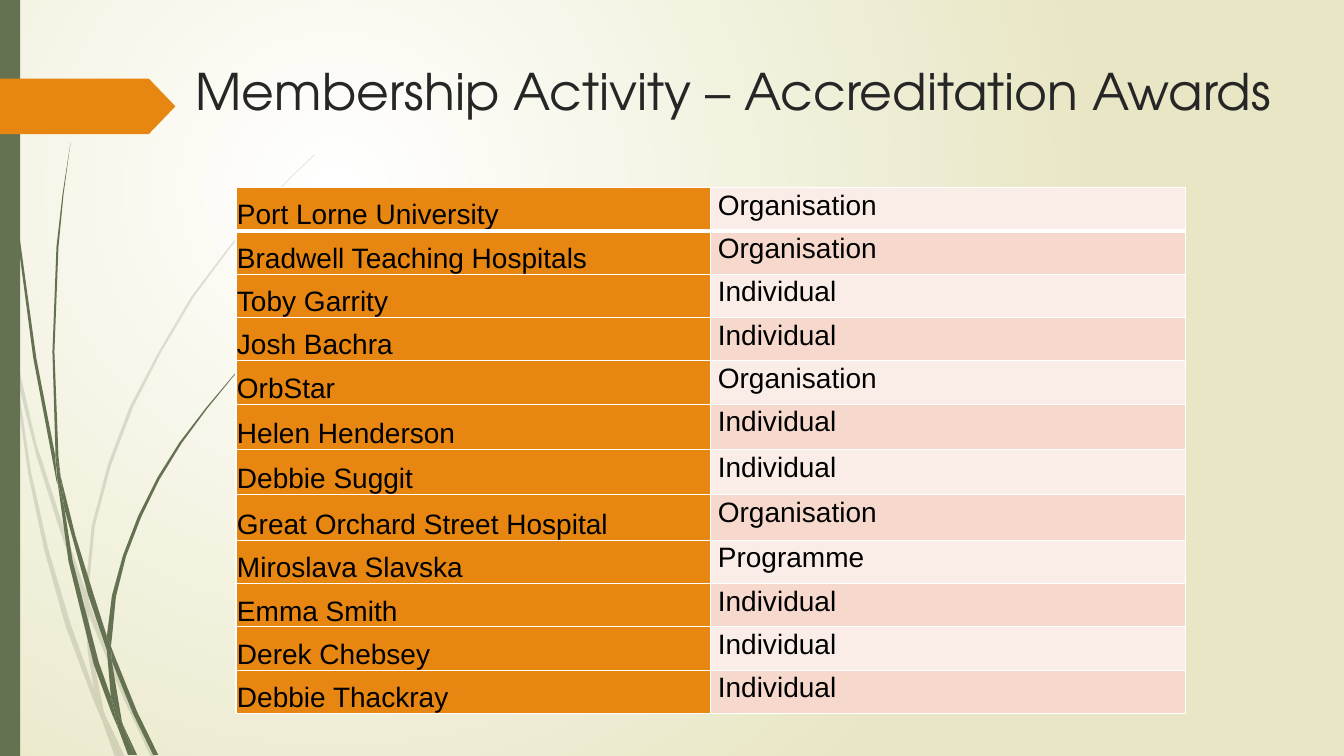
from dataclasses import dataclass

from lxml import etree
from pptx import Presentation
from pptx.dml.color import RGBColor
from pptx.enum.shapes import MSO_SHAPE
from pptx.enum.text import MSO_ANCHOR, MSO_AUTO_SIZE, PP_ALIGN
from pptx.oxml.ns import qn
from pptx.util import Inches, Pt

RECTANGLE, PENTAGON = MSO_SHAPE.RECTANGLE, MSO_SHAPE.PENTAGON
TOP, BOTTOM = MSO_ANCHOR.TOP, MSO_ANCHOR.BOTTOM
LEFT, NO_AUTOFIT = PP_ALIGN.LEFT, MSO_AUTO_SIZE.NONE
TITLE_ONLY = 5


@dataclass(frozen=True)
class Theme:
    green: str = "647252"
    orange: str = "E78712"
    pale: str = "FAEDE7"
    blush: str = "F6D9CC"
    white: str = "FFFFFF"
    sand: str = "E8E6C4"
    ink: str = "000000"
    title_ink: str = "262626"
    title_font: str = "TeX Gyre Adventor"
    body_font: str = "Arial"
    title_size: int = 36
    body_size: int = 20


THEME = Theme()

AWARDS = [
    ("Port Lorne University", "Organisation"),
    ("Bradwell Teaching Hospitals", "Organisation"),
    ("Toby Garrity", "Individual"),
    ("Josh Bachra", "Individual"),
    ("OrbStar", "Organisation"),
    ("Helen Henderson", "Individual"),
    ("Debbie Suggit", "Individual"),
    ("Great Orchard Street Hospital", "Organisation"),
    ("Miroslava Slavska", "Programme"),
    ("Emma Smith", "Individual"),
    ("Derek Chebsey", "Individual"),
    ("Debbie Thackray", "Individual"),
]
ROW_HEIGHTS = [0.43] * 5 + [0.45] * 3 + [0.43] * 4

# Outlines of the pieces that make up the blades of grass.
FADED_GRASS = [
    [(0.11, 3.5), (0.09, 3.22), (0, 2.82), (0, 2.99), (0.1, 3.44)],
    [(0.58, 5.22), (0.84, 5.99), (0.85, 5.86), (0.62, 5.2), (0.36, 4.4),
     (0.14, 3.45), (0.17, 3.76), (0.36, 4.52)],
    [(0.92, 6.07), (0.88, 5.96), (0.88, 6.1), (1.23, 6.94), (1.5, 7.51),
     (1.55, 7.51), (1.27, 6.92)],
    [(1.19, 7.51), (1.24, 7.51), (1.05, 7.11)],
    [(0.93, 6.83), (0.7, 6.19), (0.48, 5.45), (0.31, 4.69), (0.17, 3.76),
     (0.11, 3.5), (0.28, 4.7), (0.44, 5.46), (0.65, 6.21), (0.92, 6.93),
     (1.01, 7.14), (0.99, 7.07)],
    [(0.84, 5.99), (0.87, 6.46), (0.93, 6.83), (0.96, 6.92), (1.05, 7.11),
     (1.03, 7.06), (0.91, 6.46), (0.88, 6.1), (0.88, 6.08)],
    [(0.88, 5.84), (0.94, 5.22), (1.1, 4.62), (1.32, 4.04), (1.6, 3.49),
     (1.92, 2.95), (2.29, 2.45), (2.68, 1.98), (2.9, 1.75), (3.12, 1.54),
     (3.12, 1.53), (2.89, 1.75), (2.68, 1.97), (2.28, 2.44), (1.9, 2.94),
     (1.58, 3.48), (1.29, 4.03), (1.07, 4.61), (0.91, 5.22), (0.85, 5.84),
     (0.85, 5.86), (0.88, 5.96)],
    [(1.01, 7.14), (1.14, 7.51), (1.19, 7.51)],
    [(0.88, 6.08), (0.88, 6.1), (0.88, 5.96), (0.85, 5.86), (0.84, 5.99)],
    [(0.96, 6.92), (0.93, 6.83), (0.99, 7.07), (1.01, 7.14), (1.19, 7.51),
     (1.05, 7.11)],
]
GREEN_GRASS = [
    [(0.07, 1.1), (0.17, 2.33), (0.33, 3.55), (0.56, 4.77), (0.57, 4.81),
     (0.55, 4.57), (0.55, 4.53), (0.36, 3.55), (0.19, 2.32), (0.08, 1.09),
     (0.05, 0.48), (0.04, 0), (0.03, 0), (0.04, 0.48)],
    [(0.88, 5.92), (1.06, 6.45), (1.06, 6.33), (1.06, 6.31), (0.93, 5.9),
     (0.75, 5.32), (0.6, 4.72), (0.64, 5.05)],
    [(1.13, 6.49), (1.1, 6.41), (1.11, 6.56), (1.32, 7.08), (1.52, 7.49),
     (1.57, 7.49), (1.36, 7.06)],
    [(1.1, 6.91), (0.98, 6.57), (0.72, 5.56), (0.64, 5.05), (0.57, 4.77),
     (0.68, 5.57), (0.93, 6.59), (1.11, 7.08), (1.17, 7.22), (1.16, 7.17)],
    [(0.6, 4.72), (0.58, 4.53), (0.54, 3.49), (0.58, 2.45), (0.63, 1.93),
     (0.7, 1.41), (0.62, 1.93), (0.56, 2.45), (0.52, 3.49), (0.55, 4.49)],
    [(1.33, 7.49), (1.36, 7.49), (1.22, 7.19)],
    [(0.57, 4.77), (0.64, 5.05), (0.6, 4.72), (0.55, 4.49), (0.55, 4.53)],
    [(1.11, 6.33), (1.15, 5.92), (1.25, 5.52), (1.4, 5.13), (1.58, 4.76),
     (1.8, 4.4), (2.05, 4.06), (2.31, 3.74), (2.45, 3.59), (2.61, 3.44),
     (2.6, 3.44), (2.45, 3.58), (2.31, 3.73), (2.04, 4.05), (1.78, 4.39),
     (1.56, 4.74), (1.37, 5.12), (1.22, 5.51), (1.11, 5.91), (1.06, 6.31),
     (1.1, 6.41)],
    [(1.17, 7.22), (1.27, 7.49), (1.31, 7.49)],
    [(1.06, 6.45), (1.1, 6.91), (1.16, 7.06), (1.22, 7.19), (1.21, 7.16),
     (1.11, 6.56), (1.09, 6.51)],
    [(1.06, 6.45), (1.09, 6.51), (1.11, 6.56), (1.1, 6.41), (1.06, 6.31),
     (1.06, 6.33)],
    [(1.16, 7.06), (1.1, 6.91), (1.16, 7.17), (1.17, 7.22), (1.3, 7.49),
     (1.33, 7.49), (1.22, 7.19)],
]


def rgb(color):
    return RGBColor.from_string(color)


def paint(shape, color, opacity=100):
    shape.shadow.inherit = False
    shape.line.fill.background()
    shape.fill.solid()
    shape.fill.fore_color.rgb = rgb(color)
    if opacity < 100:
        for tint in shape.fill._xPr.iter(qn("a:srgbClr")):
            etree.SubElement(tint, qn("a:alpha"), val=str(opacity * 1000))


def write(frame, words, *, font, size, color, spacing=None):
    frame.text = words
    paragraph = frame.paragraphs[0]
    paragraph.alignment = LEFT
    if spacing:
        paragraph.line_spacing = spacing
    style = paragraph.runs[0].font
    style.name, style.size, style.bold = font, Pt(size), False
    style.color.rgb = rgb(color)


def add_grass(slide, left, top, pieces, opacity):
    for piece in pieces:
        outline = [(Inches(left + x), Inches(top + y)) for x, y in piece]
        builder = slide.shapes.build_freeform(*outline[0])
        builder.add_line_segments(outline[1:], close=True)
        paint(builder.convert_to_shape(), THEME.green, opacity)


def add_backdrop(slide):
    fill = slide.background.fill
    fill.gradient()
    for stop, color in zip(fill.gradient_stops, (THEME.white, THEME.sand)):
        stop.color.rgb = rgb(color)
    gradient = next(slide.element.iter(qn("a:gradFill")))
    gradient.remove(gradient.find(qn("a:lin")))
    glow = etree.SubElement(gradient, qn("a:path"), {"path": "circle"})
    etree.SubElement(glow, qn("a:fillToRect"), l="50000", t="50000",
                     r="100000", b="100000")


def add_left_edge(slide, left, top, height):
    add_grass(slide, left, top, FADED_GRASS, opacity=20)
    add_grass(slide, left, top, GREEN_GRASS, opacity=100)
    stripe = slide.shapes.add_shape(RECTANGLE, Inches(left), Inches(top),
                                    Inches(0.2), Inches(height))
    paint(stripe, THEME.green)
    pointer = slide.shapes.add_shape(PENTAGON, Inches(left), Inches(top + 0.78),
                                     Inches(1.74), Inches(0.55))
    pointer.adjustments[0] = 0.48
    paint(pointer, THEME.orange)


def add_title(slide, left, top, width, height):
    title = slide.shapes.title
    title.left, title.top = Inches(left), Inches(top)
    title.width, title.height = Inches(width), Inches(height)
    frame = title.text_frame
    write(frame, "Membership Activity – Accreditation Awards",
          font=THEME.title_font, size=THEME.title_size, color=THEME.title_ink)
    frame.vertical_anchor = TOP
    frame.auto_size = NO_AUTOFIT


def add_borders(cell, widths):
    properties = cell._tc.get_or_add_tcPr()
    for edge, points in zip(("lnL", "lnR", "lnT", "lnB"), widths):
        line = etree.SubElement(properties, qn(f"a:{edge}"), w=str(Pt(points)))
        solid = etree.SubElement(line, qn("a:solidFill"))
        etree.SubElement(solid, qn("a:srgbClr"), val=THEME.white)


def add_awards_table(slide, left, top, width):
    awards = slide.shapes.add_table(
        len(AWARDS), 2, Inches(left), Inches(top),
        Inches(width), Inches(sum(ROW_HEIGHTS))).table
    for row, (award, height) in enumerate(zip(AWARDS, ROW_HEIGHTS)):
        awards.rows[row].height = Inches(height)
        band = THEME.blush if row % 2 else THEME.pale
        looks = ((THEME.orange, BOTTOM, (0.01, 0.01, 0.01, 0), None),
                 (band, TOP, (0.07, 0, 0.07, 0), 1.07))
        for column, (words, look) in enumerate(zip(award, looks)):
            color, anchor, insets, spacing = look
            cell = awards.cell(row, column)
            add_borders(cell, (1, 1, 3 if row == 1 else 1, 3 if row == 0 else 1))
            cell.fill.solid()
            cell.fill.fore_color.rgb = rgb(color)
            cell.vertical_anchor = anchor
            (cell.margin_left, cell.margin_top,
             cell.margin_right, cell.margin_bottom) = map(Inches, insets)
            write(cell.text_frame, words, font=THEME.body_font,
                  size=THEME.body_size, color=THEME.ink, spacing=spacing)


def main():
    deck = Presentation()
    deck.slide_width, deck.slide_height = Inches(13.33), Inches(7.5)
    slide = deck.slides.add_slide(deck.slide_layouts[TITLE_ONLY])
    add_backdrop(slide)
    add_left_edge(slide, 0, 0, 7.5)
    add_awards_table(slide, 2.34, 1.86, 9.42)
    add_title(slide, 1.84, 0.55, 11.22, 0.79)
    deck.save("out.pptx")


if __name__ == "__main__":
    main()
